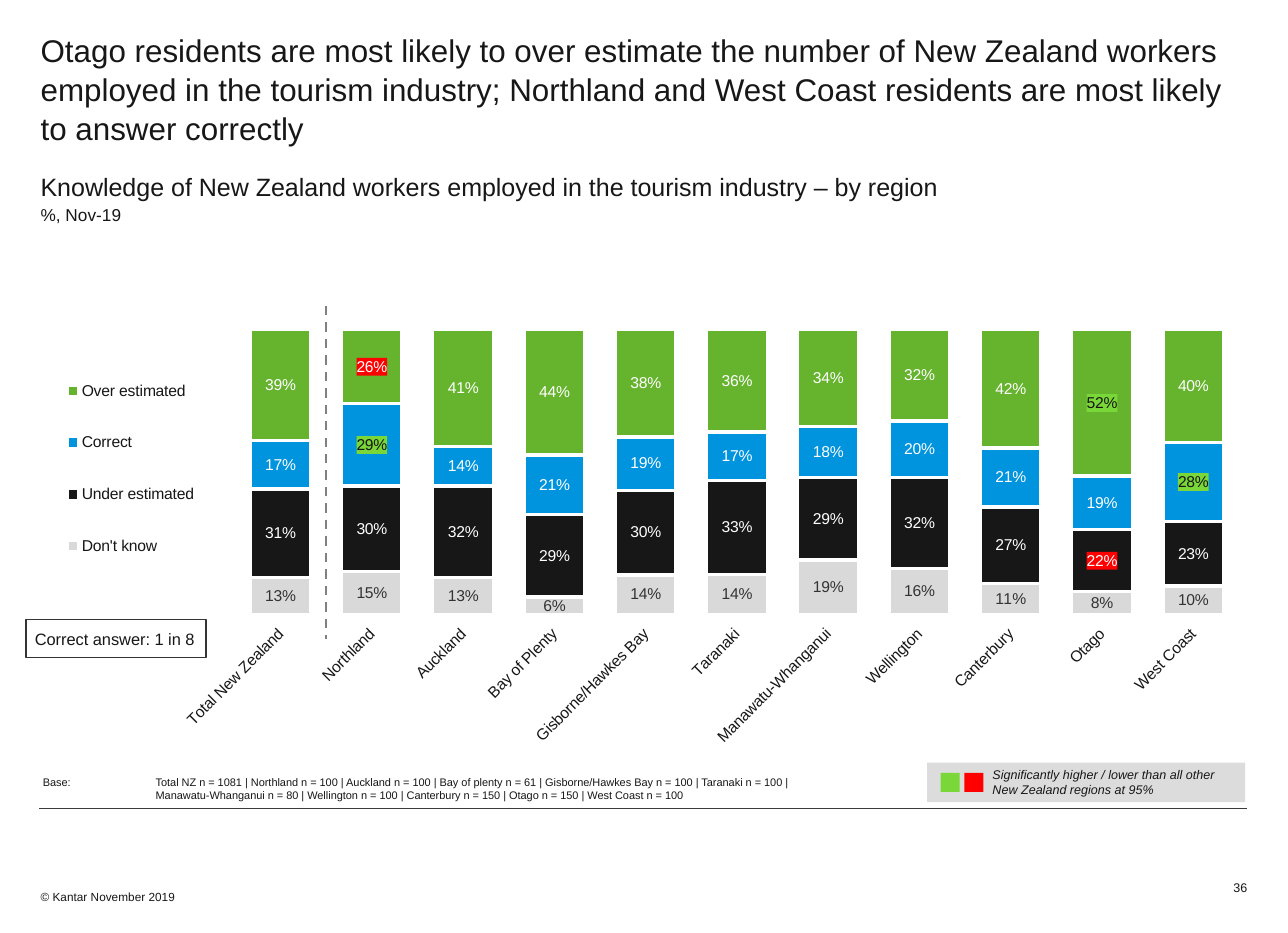
from dataclasses import dataclass
from typing import Optional

from lxml.etree import SubElement
from pptx import Presentation
from pptx.chart.data import CategoryChartData
from pptx.dml.color import RGBColor
from pptx.enum.chart import XL_CHART_TYPE, XL_LABEL_POSITION, XL_LEGEND_POSITION, XL_TICK_LABEL_POSITION, XL_TICK_MARK
from pptx.enum.dml import MSO_LINE
from pptx.enum.shapes import MSO_CONNECTOR, MSO_SHAPE
from pptx.enum.text import MSO_ANCHOR, PP_ALIGN
from pptx.oxml import parse_xml
from pptx.oxml.ns import nsdecls, qn
from pptx.util import Inches, Pt

FONT = "Arial"
HUES = {"ink": "171717", "text": "333333", "rule": "3A3A3A", "dash": "808080", "white": "FFFFFF",
        "grey": "D9D9D9", "panel": "DCDCDC", "blue": "0093DE", "green": "66B32E",
        "high": "79D738", "low": "FF0000"}
TOP, MID, LOW = MSO_ANCHOR.TOP, MSO_ANCHOR.MIDDLE, MSO_ANCHOR.BOTTOM

deck = Presentation()
deck.slide_width, deck.slide_height = Inches(11.42), Inches(8.27)
slide = deck.slides.add_slide(deck.slide_layouts[6])
COL, ROW = deck.slide_width / 100, deck.slide_height / 100


@dataclass
class Box:
    """A place on a grid of 100 columns by 100 rows."""
    x: float
    y: float
    w: float
    h: float

    def place(self) -> tuple:
        return round(self.x * COL), round(self.y * ROW), round(self.w * COL), round(self.h * ROW)


@dataclass
class Note:
    box: Box
    lines: list
    sizes: list
    inset: tuple = (0, 0, 0, 0)
    anchor: MSO_ANCHOR = TOP
    align: PP_ALIGN = PP_ALIGN.LEFT
    before: float = 0
    pitch: Optional[float] = None
    tab: float = 0
    italic: bool = False
    wrap: bool = True


@dataclass
class Block:
    box: Box
    fill: Optional[str] = None
    line: Optional[str] = None


@dataclass
class Rule:
    start: tuple
    end: tuple
    hue: str
    width: float
    dash: bool = False


@dataclass
class Band:
    """One answer: its shares in percent and the marks on its points."""
    name: str
    hue: str
    ink: str
    shares: list
    marks: dict


def tint(name: str) -> RGBColor:
    return RGBColor.from_string(HUES[name])


def style(font, size: float, hue: str) -> None:
    font.name, font.size = FONT, Pt(size)
    font.color.rgb = tint(hue)


def draw_note(note: Note) -> None:
    frame = slide.shapes.add_textbox(*note.box.place()).text_frame
    frame.word_wrap, frame.vertical_anchor = note.wrap, note.anchor
    (frame.margin_left, frame.margin_top, frame.margin_right,
     frame.margin_bottom) = map(Inches, note.inset)
    frame.text = "\n".join(note.lines)
    for i, (para, size) in enumerate(zip(frame.paragraphs, note.sizes)):
        para.alignment = note.align
        if note.pitch:
            para.line_spacing = note.pitch
        if i and note.before:
            para.space_before = Pt(note.before)
        if note.tab:
            tabs = SubElement(para._p.get_or_add_pPr(), qn("a:tabLst"))
            SubElement(tabs, qn("a:tab"), pos=str(Inches(note.tab)), algn="l")
        for run in para.runs:
            style(run.font, size, "ink")
            run.font.italic = note.italic


def draw_block(block: Block) -> None:
    shape = slide.shapes.add_shape(MSO_SHAPE.RECTANGLE, *block.box.place())
    shape.shadow.inherit = False
    if block.fill:
        shape.fill.solid()
        shape.fill.fore_color.rgb = tint(block.fill)
    else:
        shape.fill.background()
    if block.line:
        shape.line.color.rgb, shape.line.width = tint(block.line), Pt(1)
    else:
        shape.line.fill.background()


def draw_rule(rule: Rule) -> None:
    ends = [round(n * unit) for n, unit in zip(rule.start + rule.end, (COL, ROW) * 2)]
    line = slide.shapes.add_connector(MSO_CONNECTOR.STRAIGHT, *ends)
    line.line.color.rgb, line.line.width = tint(rule.hue), Pt(rule.width)
    if rule.dash:
        line.line.dash_style = MSO_LINE.DASH
    SubElement(line._element.spPr, qn("a:effectLst"))


def layout(x: float, y: float, w: float, h: float, inner: bool = False):
    """Build a manual layout in shares of the chart."""
    target = '<c:layoutTarget val="inner"/>' if inner else ""
    sides = "".join(f'<c:{k} val="{v}"/>' for k, v in zip("xywh", (x, y, w, h)))
    return parse_xml(f'<c:layout {nsdecls("c")}><c:manualLayout>{target}<c:xMode val="edge"/>'
                     f'<c:yMode val="edge"/>{sides}</c:manualLayout></c:layout>')


def mark_point(series, index: int, mark: str) -> None:
    """Put a coloured patch behind one label."""
    label = series.points[index].data_label
    style(label.font, 10, "ink" if mark == "high" else "white")
    label.position = XL_LABEL_POSITION.CENTER
    props = series._element.xpath(f"c:dLbls/c:dLbl[c:idx/@val='{index}']/c:txPr")[0]
    props.addprevious(parse_xml(f'<c:numFmt {nsdecls("c")} formatCode="0%" sourceLinked="0"/>'))
    props.addprevious(parse_xml(f'<c:spPr {nsdecls("c", "a")}><a:solidFill><a:srgbClr val="{HUES[mark]}"/>'
                                '</a:solidFill></c:spPr>'))


def draw_chart(box: Box, places: list, bands: list) -> None:
    data = CategoryChartData(number_format="0%")
    data.categories = places
    for band in bands:
        data.add_series(band.name, [n / 100 for n in band.shares])
    chart = slide.shapes.add_chart(XL_CHART_TYPE.COLUMN_STACKED_100, *box.place(), data).chart
    style(chart.font, 10, "text")
    chart.has_title = False
    plot = chart.plots[0]
    plot.gap_width, plot.overlap, plot.vary_by_categories = 50, 100, False
    for series, band in zip(plot.series, bands):
        look = series.format
        look.fill.solid()
        look.fill.fore_color.rgb = tint(band.hue)
        look.line.color.rgb, look.line.width = tint("white"), Pt(2.25)
        labels = series.data_labels
        labels.show_value, labels.position = True, XL_LABEL_POSITION.CENTER
        labels.number_format, labels.number_format_is_linked = "0%", False
        style(labels.font, 10, band.ink)
        for index, mark in band.marks.items():
            mark_point(series, index, mark)
    scale, axis = chart.value_axis, chart.category_axis
    scale.visible = scale.has_major_gridlines = False
    scale.minimum_scale, scale.maximum_scale = 0, 1
    axis.major_tick_mark = XL_TICK_MARK.NONE
    axis.tick_label_position = XL_TICK_LABEL_POSITION.LOW
    axis.format.line.fill.background()
    style(axis.tick_labels.font, 10, "ink")
    axis._element.find(qn("c:txPr")).find(qn("a:bodyPr")).set("rot", "-2700000")
    chart.has_legend = True
    key = chart.legend
    key.position, key.include_in_layout = XL_LEGEND_POSITION.LEFT, False
    style(key.font, 10, "ink")
    key._element.find(qn("c:legendPos")).addnext(layout(0.01, 0.19, 0.13, 0.44))
    area = chart._chartSpace.chart.plotArea
    for old in area.findall(qn("c:layout")):
        area.remove(old)
    area.insert(0, layout(0.161, 0.157, 0.832, 0.519, True))


PLACES = ["Total New Zealand", "Northland", "Auckland", "Bay of Plenty", "Gisborne/Hawkes Bay", "Taranaki",
          "Manawatu-Whanganui", "Wellington", "Canterbury", "Otago", "West Coast"]
BANDS = [
    Band("Don't know", "grey", "text", [13, 15, 13, 6, 14, 14, 19, 16, 11, 8, 10], {}),
    Band("Under estimated", "ink", "white", [31, 30, 32, 29, 30, 33, 29, 32, 27, 22, 23], {9: "low"}),
    Band("Correct", "blue", "white", [17, 29, 14, 21, 19, 17, 18, 20, 21, 19, 28], {1: "high", 10: "high"}),
    Band("Over estimated", "green", "white", [39, 26, 41, 44, 38, 36, 34, 32, 42, 52, 40], {1: "low", 9: "high"}),
]
ANSWER, PANEL = Box(2.01, 66.38, 14.01, 4.11), Box(71.98, 81.74, 24.69, 4.23)
RULES = [Rule((3.06, 86.7), (96.85, 86.7), "rule", 0.75),
         Rule((25.31, 32.77), (25.31, 68.44), "dash", 1.5, True)]
BLOCKS = [Block(ANSWER, line="text"), Block(PANEL, "panel"),
          Block(Box(74.87, 82.83, 1.49, 2.06), "low"), Block(Box(73.03, 82.83, 1.49, 2.06), "high")]
NOTES = [
    Note(Box(3.15, 0, 93.7, 15),
         ["Otago residents are most likely to over estimate the number of New Zealand workers employed in the "
          "tourism industry; Northland and West Coast residents are most likely to answer correctly"],
         [20], (0, 0.26, 0, 0), pitch=1.04),
    Note(Box(3.15, 15, 93.7, 11.12),
         ["Knowledge of New Zealand workers employed in the tourism industry – by region", "%, Nov-19"],
         [16, 11], (0, 0.28, 0, 0), before=2),
    Note(ANSWER, ["Correct answer: 1 in 8"], [10.5], (0.08,) * 4, MID, wrap=False),
    Note(Box(76.71, 81.74, 18.74, 4.23),
         ["Significantly higher / lower than all other New Zealand regions at 95%"], [8], (0.04,) * 4, italic=True),
    Note(Box(3.33, 82.83, 68.65, 3.14),
         ["Base:\tTotal NZ n = 1081 | Northland n = 100 | Auckland n = 100 | Bay of plenty n = 61 | "
          "Gisborne/Hawkes Bay n = 100 | Taranaki n = 100 |",
          "\tManawatu-Whanganui n = 80 | Wellington n = 100 | Canterbury n = 150 | Otago n = 150 | "
          "West Coast n = 100"], [7, 7], anchor=LOW, tab=1),
    Note(Box(3.15, 92.5, 24.34, 7.01), ["© Kantar November 2019"], [7.5], (0, 0, 0, 0.31), LOW),
    Note(Box(91.33, 92.26, 5.52, 3.63), ["36"], [8], anchor=LOW, align=PP_ALIGN.RIGHT),
]

draw_chart(Box(3.15, 26.12, 93.7, 58.77), PLACES, BANDS)
for draw, parts in ((draw_rule, RULES), (draw_block, BLOCKS), (draw_note, NOTES)):
    for part in parts:
        draw(part)
deck.save("out.pptx")
